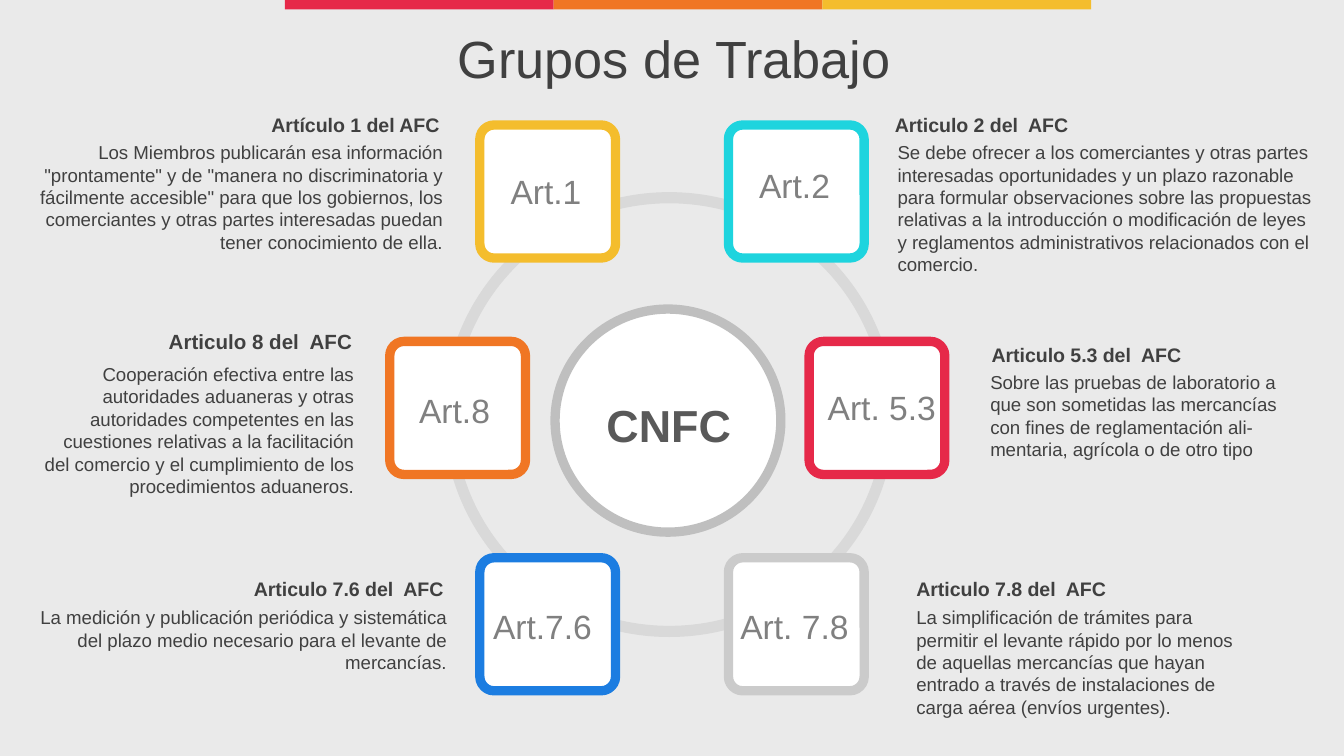
from pptx import Presentation
from pptx.dml.color import RGBColor
from pptx.enum.shapes import MSO_SHAPE as Shape
from pptx.enum.text import MSO_ANCHOR as Anchor, PP_ALIGN as Align
from pptx.util import Inches, Pt

TITLE = "Grupos de Trabajo"
CENTER = "CNFC"
BANDS = ["E62949", "F07624", "F4BD2D"]
DARK = "404040"
W = 10
H = W * 9 / 16
BOX_W, BOX_H = 1.01, 0.99
TOP, ROW_STEP = 0.93, 1.61

GROUPS = [
    dict(label="Art.1", label_at=(3.7, 1.22), label_w=0.81, col=3.57, row=0, color="F4BD2D",
         head="Artículo 1 del AFC", head_at=(0.13, 0.79), size=10.5,
         body_at=(0.15, 1.0), body_w=3.24, align=Align.RIGHT,
         body=["Los Miembros publicarán esa información \"prontamente\" y de \"manera no "
               "discriminatoria y fácilmente accesible\" para que los gobiernos, los comerciantes "
               "y otras partes interesadas puedan tener conocimiento de ella."]),
    dict(label="Art.2", label_at=(5.55, 1.18), label_w=0.73, col=5.42, row=0, color="1ED4DE",
         head="Articulo 2 del  AFC", head_at=(6.56, 0.79), size=10.5,
         body_at=(6.58, 1.0), body_w=3.32, align=Align.LEFT,
         body=["Se debe ofrecer a los comerciantes y otras partes interesadas oportunidades y un "
               "plazo razonable para formular observaciones sobre las propuestas relativas a la "
               "introducción o modificación de leyes y reglamentos administrativos relacionados "
               "con el comercio."]),
    dict(label="Art.7.6", label_at=(3.57, 4.46), label_w=0.95, col=3.57, row=2, color="1C7DE1",
         head="Articulo 7.6 del  AFC", head_at=(0.16, 4.24), size=10.5,
         body_at=(0.18, 4.46), body_w=3.24, align=Align.RIGHT,
         body=["La medición y publicación periódica y sistemática del plazo medio necesario "
               "para el levante de mercancías."]),
    dict(label="Art. 7.8", label_at=(5.41, 4.46), label_w=1.02, col=5.42, row=2, color="CBCBCB",
         head="Articulo 7.8 del  AFC", head_at=(6.72, 4.24), size=10.5,
         body_at=(6.72, 4.46), body_w=2.73, align=Align.LEFT,
         body=["La simplificación de trámites para permitir el levante rápido por lo menos de "
               "aquellas mercancías que hayan entrado a través de instalaciones de carga aérea "
               "(envíos urgentes)."]),
    dict(label="Art.8", label_at=(3.02, 2.85), label_w=0.73, col=2.9, row=1, color="F07624",
         head="Articulo 8 del  AFC", head_at=(0.16, 2.4), size=11,
         body_at=(0.17, 2.65), body_w=2.56, align=Align.RIGHT,
         body=["Cooperación efectiva entre las autoridades aduaneras y otras autoridades "
               "competentes en las cuestiones relativas a la facilitación del comercio y el "
               "cumplimiento de los procedimientos aduaneros."]),
    dict(label="Art. 5.3", label_at=(6.06, 2.83), label_w=1.02, col=6.02, row=1, color="E62949",
         head="Articulo 5.3 del  AFC", head_at=(7.28, 2.5), size=10.5,
         body_at=(7.27, 2.71), body_w=2.36, align=Align.LEFT,
         body=["Sobre las pruebas de laboratorio a que son sometidas las mercancías con fines "
               "de reglamentación ali-",
               "mentaria, agrícola o de otro tipo"]),
]


def rgb(color):
    return RGBColor.from_string(color)


def place(box):
    return [Inches(v) for v in box]


def add_shape(s, kind, box, fill, line=None, adj=None):
    sp = s.shapes.add_shape(kind, *place(box))
    sp.shadow.inherit = False
    sp.fill.solid()
    sp.fill.fore_color.rgb = rgb(fill)
    if line:
        sp.line.color.rgb = rgb(line)
        sp.line.width = Pt(5)
    else:
        sp.line.fill.background()
    if adj is not None:
        sp.adjustments[0] = adj


def style(p, size, color, bold=False, align=Align.LEFT):
    p.alignment = align
    p.font.name = "Arial"
    p.font.size = Pt(size)
    p.font.bold = bold
    p.font.color.rgb = rgb(color)


def add_text(s, box, lines, size, color, bold=False, align=Align.LEFT, wrap=True):
    tf = s.shapes.add_textbox(*place(box)).text_frame
    tf.word_wrap = wrap
    tf.text = "\n".join(lines)
    for p in tf.paragraphs:
        style(p, size, color, bold, align)


prs = Presentation()
prs.slide_width, prs.slide_height = Inches(W), Inches(H)
s = prs.slides.add_slide(prs.slide_layouts[5])
s.background.fill.solid()
s.background.fill.fore_color.rgb = rgb("EAEAEA")

title = s.shapes.title
title.left, title.top, title.width, title.height = place((0.4, 0.07, 9.23, 0.72))
title.text_frame.text = TITLE
title.text_frame.vertical_anchor = Anchor.MIDDLE
style(title.text_frame.paragraphs[0], 28, DARK, align=Align.CENTER)

for i, color in enumerate(BANDS):
    add_shape(s, Shape.RECTANGLE, (2.12 + 2 * i, 0, 2, 0.07), color)

add_shape(s, Shape.OVAL, (4.13, 2.3, 1.68, 1.66), "FFFFFF", "BFBFBF")
add_text(s, (4.33, 2.91, 1.29, 0.5), [CENTER], 24, "595959", True, Align.CENTER)
add_shape(s, Shape.DONUT, (3.3, 1.43, 3.36, 3.31), "D9D9D9", adj=0.025)

for g in GROUPS:
    box = (g["col"], TOP + ROW_STEP * g["row"], BOX_W, BOX_H)
    add_shape(s, Shape.ROUNDED_RECTANGLE, box, "FFFFFF", g["color"], 0.107)
    add_text(s, (*g["label_at"], g["label_w"], 0.4), [g["label"]], 18, "808080", wrap=False)
    add_text(s, (*g["head_at"], g["body_w"], 0.28), [g["head"]], g["size"], DARK, True, g["align"])
    add_text(s, (*g["body_at"], g["body_w"], 0.94), g["body"], 10, DARK, align=g["align"])

prs.save("out.pptx")
